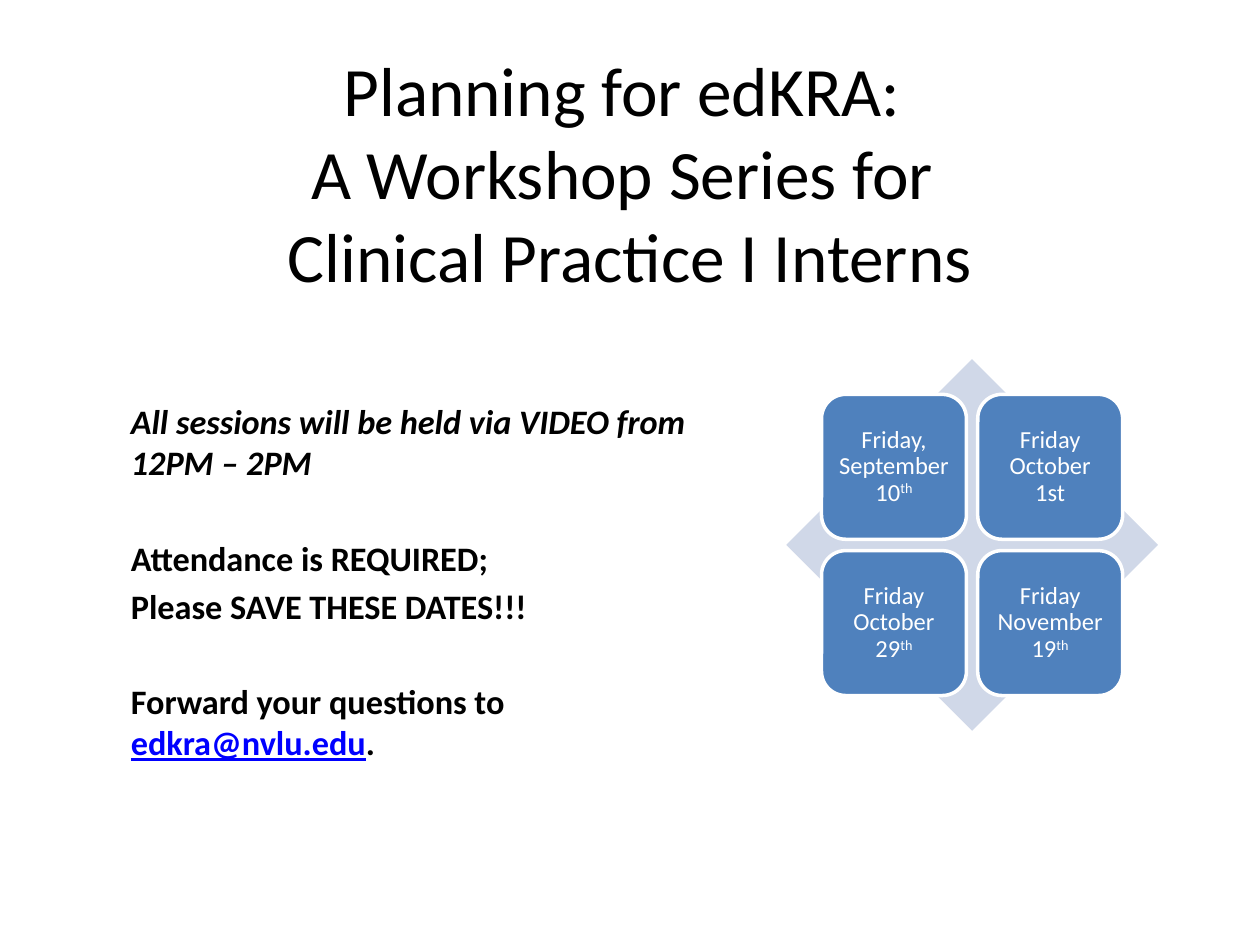
from pptx import Presentation
from pptx.dml.color import RGBColor
from pptx.enum.shapes import MSO_SHAPE
from pptx.enum.text import MSO_ANCHOR, PP_ALIGN
from pptx.util import Inches, Pt

DIAMOND, ROUNDED = MSO_SHAPE.DIAMOND, MSO_SHAPE.ROUNDED_RECTANGLE
MIDDLE, CENTER = MSO_ANCHOR.MIDDLE, PP_ALIGN.CENTER

BLACK = RGBColor(0x00, 0x00, 0x00)
WHITE = RGBColor(0xFF, 0xFF, 0xFF)
LINK_BLUE = RGBColor(0x00, 0x00, 0xFF)
TILE_BLUE = RGBColor(0x4F, 0x81, 0xBD)
PALE_BLUE = RGBColor(0xD0, 0xD8, 0xE8)
FONT = "Calibri"

TITLE = "Planning for edKRA: \vA Workshop Series for \vClinical Practice I Interns"
EMAIL = "edkra@nvlu.edu"
# Space before in points, italic, pieces of text
DETAILS = [
    (0, True, ["All sessions will be held via VIDEO from 12PM – 2PM"]),
    (31, False, ["Attendance is REQUIRED;"]),
    (4, False, ["Please SAVE THESE DATES!!!"]),
    (31, False, ["Forward your questions to ", EMAIL, "."]),
]
# Date and raised ending, row by row
SESSIONS = [
    ("Friday,\vSeptember\v10", "th"),
    ("Friday\vOctober\v1st", ""),
    ("Friday\vOctober\v29", "th"),
    ("Friday\vNovember\v19", "th"),
]
DIAMOND_LEFT, DIAMOND_TOP, DIAMOND_SIZE = 6.24, 2.85, 2.95
TILE_INSET, TILE_SIZE, TILE_PITCH = 0.28, 1.15, 1.24


def style_font(font, size, color):
    font.name, font.size = FONT, Pt(size)
    font.color.rgb = color


def add_text_box(slide, left, top, width, height):
    box = slide.shapes.add_textbox(
        Inches(left), Inches(top), Inches(width), Inches(height))
    box.text_frame.word_wrap = True
    return box.text_frame


def add_square(slide, kind, left, top, size, color):
    shape = slide.shapes.add_shape(
        kind, Inches(left), Inches(top), Inches(size), Inches(size))
    shape.shadow.inherit = False
    shape.fill.solid()
    shape.fill.fore_color.rgb = color
    shape.line.fill.background()
    return shape


def add_title(slide):
    frame = add_text_box(slide, 0.5, 0.35, 9, 2.03)
    frame.vertical_anchor = MIDDLE
    paragraph = frame.paragraphs[0]
    paragraph.text = TITLE
    paragraph.alignment = CENTER
    for run in paragraph.runs:
        style_font(run.font, 39.6, BLACK)


def add_details(slide):
    frame = add_text_box(slide, 0.94, 3.13, 4.61, 3)
    for index, (space, italic, pieces) in enumerate(DETAILS):
        paragraph = frame.add_paragraph() if index else frame.paragraphs[0]
        paragraph.space_before = Pt(space)
        for piece in pieces:
            run = paragraph.add_run()
            run.text = piece
            is_email = piece == EMAIL
            style_font(run.font, 19.6, LINK_BLUE if is_email else BLACK)
            run.font.bold, run.font.italic = True, italic
            run.font.underline = is_email


def add_session(slide, index, date, ending):
    row, column = divmod(index, 2)
    tile = add_square(slide, ROUNDED,
                      DIAMOND_LEFT + TILE_INSET + column * TILE_PITCH,
                      DIAMOND_TOP + TILE_INSET + row * TILE_PITCH,
                      TILE_SIZE, TILE_BLUE)
    tile.line.color.rgb = WHITE
    tile.line.width = Pt(2)
    frame = tile.text_frame
    frame.word_wrap = True
    frame.vertical_anchor = MIDDLE
    frame.margin_left = frame.margin_right = Inches(0.06)
    frame.margin_top = frame.margin_bottom = Inches(0.06)
    paragraph = frame.paragraphs[0]
    paragraph.text = date
    paragraph.alignment = CENTER
    paragraph.line_spacing = 0.9
    if ending:
        raised = paragraph.add_run()
        raised.text = ending
        raised.font._element.set("baseline", "30000")
    for run in paragraph.runs:
        style_font(run.font, 14, WHITE)


def main():
    presentation = Presentation()
    presentation.slide_width, presentation.slide_height = Inches(10), Inches(7.5)
    slide = presentation.slides.add_slide(presentation.slide_layouts[6])
    add_title(slide)
    add_details(slide)
    add_square(slide, DIAMOND, DIAMOND_LEFT, DIAMOND_TOP, DIAMOND_SIZE, PALE_BLUE)
    for index, (date, ending) in enumerate(SESSIONS):
        add_session(slide, index, date, ending)
    presentation.save("out.pptx")


if __name__ == "__main__":
    main()
